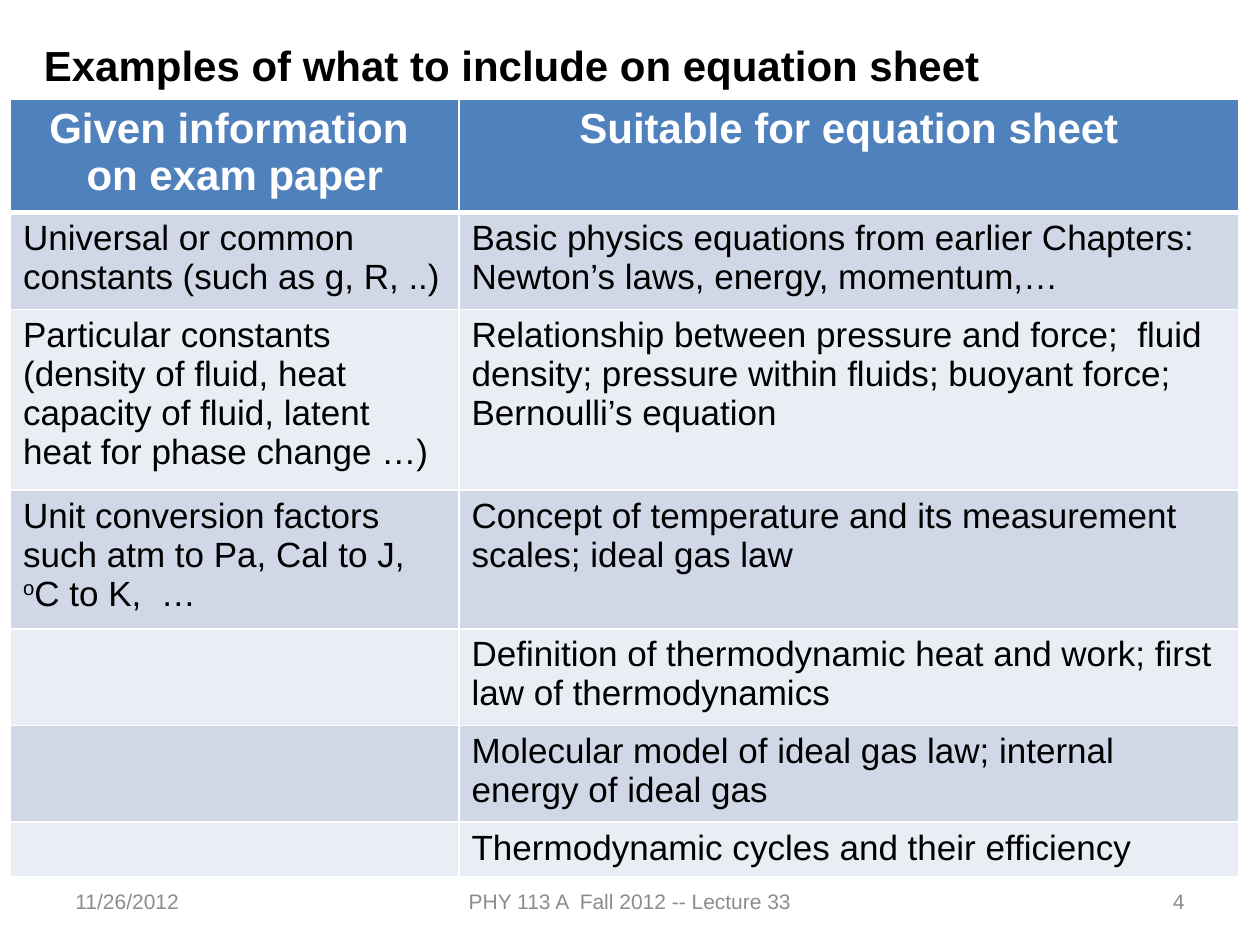
import pptx
import pptx.util
import pptx.dml.color
import pptx.enum.text
import pptx.oxml
import pptx.oxml.ns

Pt = pptx.util.Pt
RGBColor = pptx.dml.color.RGBColor
ALIGN = pptx.enum.text.PP_ALIGN
ANCHOR = pptx.enum.text.MSO_ANCHOR

WHITE = RGBColor(0xFF, 0xFF, 0xFF)
BLACK = RGBColor(0, 0, 0)
GRAY = RGBColor(0x8C, 0x8C, 0x8C)
BLUE = RGBColor(0x4F, 0x81, 0xBD)
BANDS = [RGBColor(0xE9, 0xED, 0xF4), RGBColor(0xD0, 0xD8, 0xE8)]

COLS = [256.3, 445.7]
# Row height, left cell, right cell
ROWS = [
    (64.8, "Given information \non exam paper", "Suitable for equation sheet"),
    (55.2, "Universal or common constants (such as g, R, ..)",
     "Basic physics equations from earlier Chapters: Newton’s laws, "
     "energy, momentum,…"),
    (103.2, "Particular constants (density of fluid, heat capacity of fluid, "
     "latent heat for phase change …)",
     "Relationship between pressure and force;  fluid density; pressure "
     "within fluids; buoyant force;  Bernoulli’s equation"),
    (79.2, "Unit conversion factors such atm to Pa, Cal to J,\n",
     "Concept of temperature and its measurement scales; ideal gas law"),
    (55.2, "", "Definition of thermodynamic heat and work; first law of "
     "thermodynamics"),
    (55.2, "", "Molecular model of ideal gas law; internal energy of ideal gas"),
    (31.2, "", "Thermodynamic cycles and their efficiency"),
]


def style(frame, size, color, bold=False, align=ALIGN.LEFT):
    for para in frame.paragraphs:
        para.alignment = align
        for run in para.runs:
            font = run.font
            font.name, font.size, font.bold = "Arial", Pt(size), bold
            font.color.rgb = color


def add_text(slide, box, text, size, color, bold=False, align=ALIGN.LEFT,
             anchor=ANCHOR.TOP):
    frame = slide.shapes.add_textbox(*map(Pt, box)).text_frame
    frame.word_wrap = True
    frame.vertical_anchor = anchor
    frame.text = text
    style(frame, size, color, bold, align)


def add_lines(cell, base):
    # White cell borders, which must come before the fill
    props = cell._tc.get_or_add_tcPr()
    sides = [("L", 1), ("R", 1), ("T", 1), ("B", base)]
    for spot, (side, width) in enumerate(sides):
        props.insert(spot, pptx.oxml.parse_xml(
            f'<a:ln{side} {pptx.oxml.ns.nsdecls("a")} w="{Pt(width)}">'
            f'<a:solidFill><a:srgbClr val="{WHITE}"/></a:solidFill>'
            f'</a:ln{side}>'))


def add_grid(slide, left, top):
    size = sum(COLS), sum(row[0] for row in ROWS)
    grid = slide.shapes.add_table(
        len(ROWS), len(COLS), *map(Pt, (left, top, *size))).table
    for col, width in zip(grid.columns, COLS):
        col.width = Pt(width)
    for r, (height, *texts) in enumerate(ROWS):
        grid.rows[r].height = Pt(height)
        head = r == 0
        for c, text in enumerate(texts):
            cell = grid.cell(r, c)
            cell.fill.solid()
            cell.fill.fore_color.rgb = BLUE if head else BANDS[r % 2]
            add_lines(cell, 3 if r < 1 else 1)
            cell.text_frame.text = text
            if head:
                style(cell.text_frame, 24, WHITE, True, ALIGN.CENTER)
            else:
                style(cell.text_frame, 20, BLACK)
    # Degree sign set as a raised letter
    frame = grid.cell(3, 0).text_frame
    para = frame.paragraphs[1]
    for text in ("o", "C to K,  …"):
        para.add_run().text = text
    style(frame, 20, BLACK)
    para.runs[0]._r.get_or_add_rPr().set("baseline", "30000")


def add_foot(slide, top, height):
    parts = [
        (36, 168, "11/26/2012", ALIGN.LEFT),
        (246, 228, "PHY 113 A  Fall 2012 -- Lecture 33", ALIGN.CENTER),
        (516, 168, "4", ALIGN.RIGHT),
    ]
    for left, width, text, align in parts:
        add_text(slide, (left, top, width, height), text, 12, GRAY,
                 align=align, anchor=ANCHOR.MIDDLE)


def main():
    deck = pptx.Presentation()
    deck.slide_width, deck.slide_height = Pt(720), Pt(540)
    slide = deck.slides.add_slide(deck.slide_layouts[6])
    add_foot(slide, 500.5, 28.75)
    add_text(slide, (18, 19, 612, 36), "Examples of what to include on "
             "equation sheet", 24, BLACK, True)
    add_grid(slide, 6, 56.7)
    deck.save("out.pptx")


if __name__ == "__main__":
    main()
